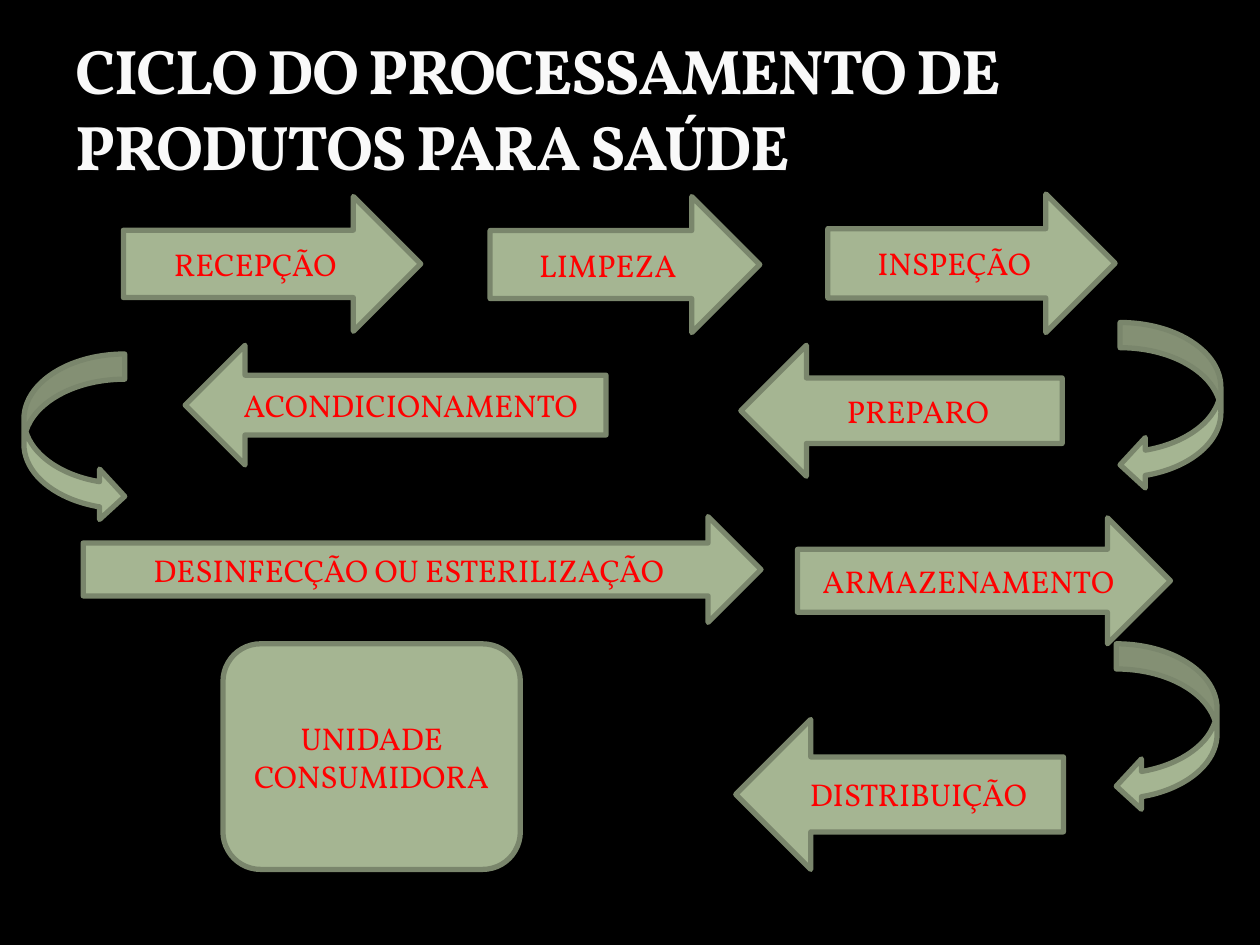
from dataclasses import dataclass

from pptx import Presentation, util as u
from pptx.dml.color import RGBColor
from pptx.enum import shapes, text

KIND = shapes.MSO_SHAPE
COLUMNS, ROWS = 100, 75  # square cells over the whole slide

TITLE = "CICLO DO PROCESSAMENTO DE PRODUTOS PARA SAÚDE"
TITLE_AREA = (5, 1.7, 90, 13.3)

# Steps in cycle order: label, shape, (left, top, width, height) in grid cells
STEPS = [
    ("RECEPÇÃO", KIND.RIGHT_ARROW, (9.8, 15.6, 23.6, 10.7)),
    ("LIMPEZA", KIND.RIGHT_ARROW, (38.9, 15.6, 21.4, 10.8)),
    ("INSPEÇÃO", KIND.RIGHT_ARROW, (65.7, 15.4, 22.8, 11)),
    ("PREPARO", KIND.LEFT_ARROW, (58.8, 27.4, 25.5, 10.4)),
    ("ACONDICIONAMENTO", KIND.LEFT_ARROW, (14.7, 27.4, 33.4, 9.5)),
    ("DESINFECÇÃO OU ESTERILIZAÇÃO", KIND.RIGHT_ARROW, (6.6, 41, 53.8, 8.4)),
    ("ARMAZENAMENTO", KIND.RIGHT_ARROW, (63.3, 41.1, 29.6, 10)),
    ("DISTRIBUIÇÃO", KIND.LEFT_ARROW, (58.4, 57.1, 26, 11.9)),
    ("UNIDADE CONSUMIDORA", KIND.FLOWCHART_ALTERNATE_PROCESS,
     (17.7, 51.1, 23.6, 17.9)),
]

# Turns between rows: shape, left, top; all of one size
TURN_SIZE = (8, 13.3)
TURNS = [
    (KIND.CURVED_LEFT_ARROW, 88.9, 25.6),
    (KIND.CURVED_RIGHT_ARROW, 1.9, 28.1),
    (KIND.CURVED_LEFT_ARROW, 88.6, 51.1),
]


@dataclass(frozen=True)
class Theme:
    font: str = "Vollkorn"
    background: str = "000000"
    title: str = "F9F9F9"
    label: str = "FF0000"
    fill: str = "A5B592"
    line: str = "7A866C"
    title_size: int = 36
    label_size: int = 18
    line_width: int = 3


THEME = Theme()


def color(code):
    return RGBColor.from_string(code)


def place(deck, area):
    """Turn grid cells into slide lengths."""
    cells = (deck.slide_width / COLUMNS, deck.slide_height / ROWS)
    return [round(share * cells[i % 2]) for i, share in enumerate(area)]


def write(shape, words, size, code, align, anchor, bold=False):
    frame = shape.text_frame
    frame.text = words
    frame.word_wrap = True
    frame.auto_size = text.MSO_AUTO_SIZE.NONE
    frame.vertical_anchor = anchor
    para = frame.paragraphs[0]
    para.alignment = align
    font = para.runs[0].font
    font.name, font.size, font.bold = THEME.font, u.Pt(size), bold
    font.color.rgb = color(code)
    return para.runs[0]


def add_box(deck, page, kind, area):
    box = page.shapes.add_shape(kind, *place(deck, area))
    box.shadow.inherit = False
    box.fill.solid()
    box.fill.fore_color.rgb = color(THEME.fill)
    box.line.color.rgb = color(THEME.line)
    box.line.width = u.Pt(THEME.line_width)
    return box


def main():
    deck = Presentation()
    deck.slide_width, deck.slide_height = u.Inches(10), u.Inches(7.5)
    page = deck.slides.add_slide(deck.slide_layouts.get_by_name("Title Only"))
    page.background.fill.solid()
    page.background.fill.fore_color.rgb = color(THEME.background)

    title = page.shapes.title
    title.left, title.top, title.width, title.height = place(deck, TITLE_AREA)
    span = write(title, TITLE, THEME.title_size, THEME.title,
                 text.PP_ALIGN.LEFT, text.MSO_ANCHOR.BOTTOM, bold=True)
    span.font._element.set("spc", "-100")

    for label, kind, area in STEPS:
        box = add_box(deck, page, kind, area)
        write(box, label, THEME.label_size, THEME.label,
              text.PP_ALIGN.CENTER, text.MSO_ANCHOR.MIDDLE)
    for kind, left, top in TURNS:
        add_box(deck, page, kind, (left, top, *TURN_SIZE))

    deck.save("out.pptx")


if __name__ == "__main__":
    main()
